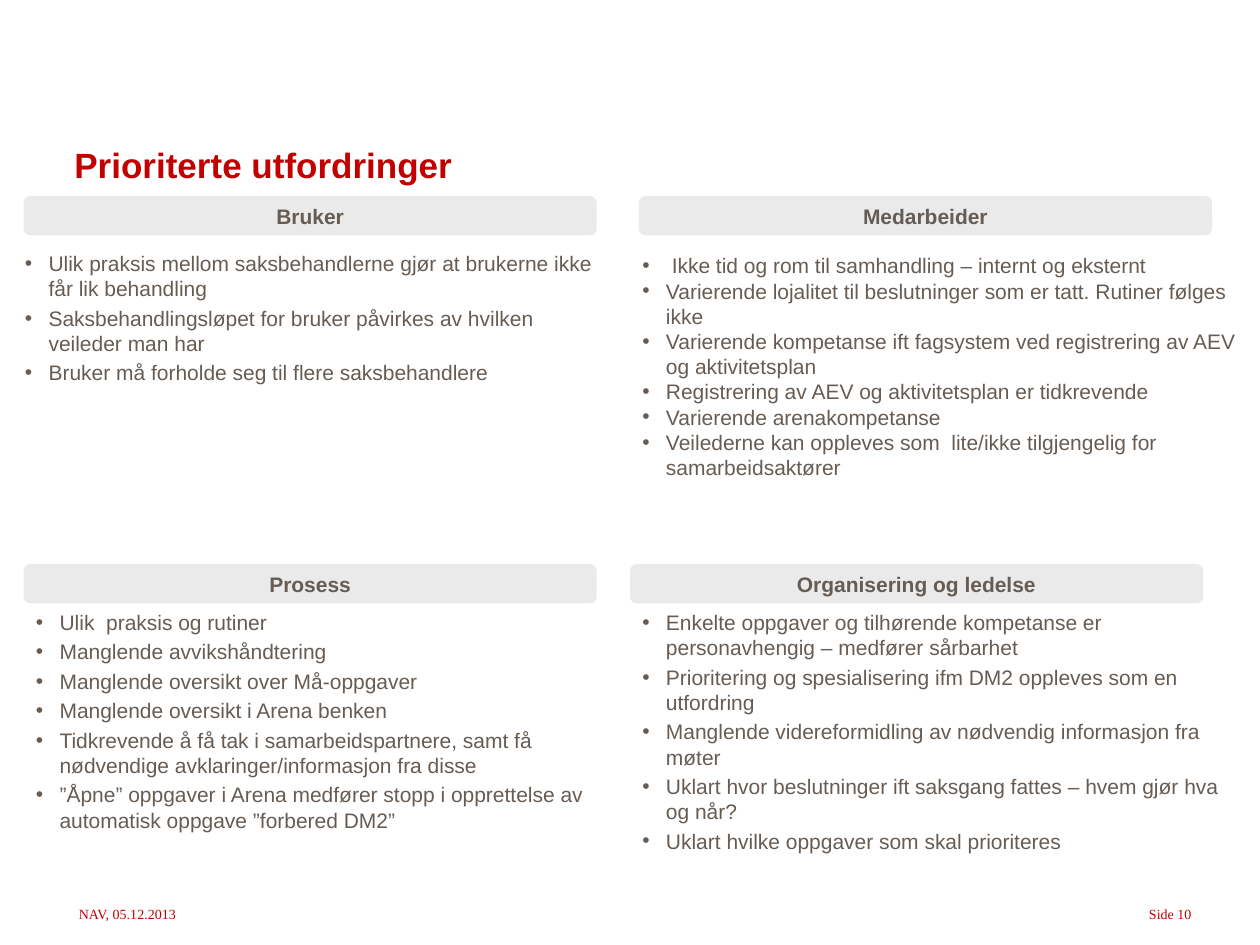
import pptx
import pptx.util
import pptx.dml.color
import pptx.enum.shapes
import pptx.enum.text
import lxml.etree

Pt = pptx.util.Pt
Kind = pptx.enum.shapes.MSO_SHAPE
Side = pptx.enum.text.PP_ALIGN
Hold = pptx.enum.text.MSO_ANCHOR
Fit = pptx.enum.text.MSO_AUTO_SIZE
RED, BROWN, GREY, WHITE = "C30000", "675C53", "EAEAEA", "FFFFFF"


def paint(part, shade):
    if hasattr(part, "solid"):
        part.solid()
        part.fore_color.rgb = pptx.dml.color.RGBColor.from_string(shade)
    else:
        part.color.rgb = pptx.dml.color.RGBColor.from_string(shade)


def write(shape, lines, look, shade, side=Side.LEFT, hold=Hold.TOP, wrap=True, dot=False, gap=0):
    frame = shape.text_frame
    frame.auto_size = Fit.NONE
    frame.word_wrap = wrap
    frame.vertical_anchor = hold
    for rank, line in enumerate(lines):
        para = frame.add_paragraph() if rank else frame.paragraphs[0]
        para.text = line
        para.alignment = side
        para.space_before = Pt(gap if rank else 0)
        if dot:
            props = para._p.get_or_add_pPr()
            props.set("marL", str(Pt(13.5)))
            props.set("indent", str(-Pt(13.5)))
            space = "{http://schemas.openxmlformats.org/drawingml/2006/main}"
            lxml.etree.SubElement(props, space + "buFont", typeface="Arial")
            lxml.etree.SubElement(props, space + "buChar", char="•")
        for name, value in look.items():
            setattr(para.font, name, value)
        paint(para.font, shade)


deck = pptx.Presentation()
deck.slide_width, deck.slide_height = Pt(720), Pt(540)
slide = deck.slides.add_slide(deck.slide_layouts[5])
shapes = slide.shapes

plain = {"name": "Arial", "size": Pt(12), "bold": False}
strong = {**plain, "bold": True}
large = {**strong, "size": Pt(20)}
small = {"name": "Times New Roman", "size": Pt(8)}

title = shapes.title
place = {"left": 35.3, "top": 20, "width": 571.7, "height": 89.3}
for name, value in place.items():
    setattr(title, name, Pt(value))
write(title, ["Prioriterte utfordringer"], large, RED, hold=Hold.BOTTOM)
title.text_frame.paragraphs[0].line_spacing = 0.8

feet = [
    ("NAV, 05.12.2013", 38, 72, Side.LEFT),
    ("Side 10", 648, 40, Side.RIGHT),
]
for text, left, width, side in feet:
    foot = shapes.add_textbox(Pt(left), Pt(514), Pt(width), Pt(16.5))
    write(foot, [text], small, RED, side, wrap=False)

themes = [
    ("Bruker", 13.5, 112, (7.2, 139.7, 340.6, 166.3), 2.4, None, [
        "Ulik praksis mellom saksbehandlerne gjør at brukerne ikke får lik behandling",
        "Saksbehandlingsløpet for bruker påvirkes av hvilken veileder man har",
        "Bruker må forholde seg til flere saksbehandlere",
    ]),
    ("Medarbeider", 365.1, 112, (360, 141, 360, 162.7), 0, None, [
        " Ikke tid og rom til samhandling – internt og eksternt",
        "Varierende lojalitet til beslutninger som er tatt. Rutiner følges ikke",
        "Varierende kompetanse ift fagsystem ved registrering av AEV og aktivitetsplan",
        "Registrering av AEV og aktivitetsplan er tidkrevende",
        "Varierende arenakompetanse",
        "Veilederne kan oppleves som  lite/ikke tilgjengelig for samarbeidsaktører",
    ]),
    ("Prosess", 13.5, 322.3, (13.5, 344.8, 336.2, 153.4), 2.4, WHITE, [
        "Ulik  praksis og rutiner",
        "Manglende avvikshåndtering",
        "Manglende oversikt over Må-oppgaver",
        "Manglende oversikt i Arena benken",
        "Tidkrevende å få tak i samarbeidspartnere, samt få nødvendige avklaringer/informasjon fra disse",
        "”Åpne” oppgaver i Arena medfører stopp i opprettelse av automatisk oppgave ”forbered DM2”",
    ]),
    ("Organisering og ledelse", 360, 322.3, (360, 344.8, 345.6, 159), 2.4, None, [
        "Enkelte oppgaver og tilhørende kompetanse er personavhengig – medfører sårbarhet",
        "Prioritering og spesialisering ifm DM2 oppleves som en utfordring",
        "Manglende videreformidling av nødvendig informasjon fra møter",
        "Uklart hvor beslutninger ift saksgang fattes – hvem gjør hva og når?",
        "Uklart hvilke oppgaver som skal prioriteres",
    ]),
]
for head, left, top, area, gap, back, points in themes:
    spot = [Pt(value) for value in area]
    if back:
        box = shapes.add_shape(Kind.RECTANGLE, *spot)
        box.shadow.inherit = False
        paint(box.fill, back)
        box.line.fill.background()
    else:
        box = shapes.add_textbox(*spot)
    write(box, points, plain, BROWN, dot=True, gap=gap)

    bar = shapes.add_shape(Kind.ROUNDED_RECTANGLE, Pt(left), Pt(top), Pt(327.5), Pt(22.5))
    bar.shadow.inherit = False
    paint(bar.fill, GREY)
    bar.line.fill.background()
    write(bar, [head], strong, BROWN, Side.CENTER, Hold.MIDDLE)

deck.save("out.pptx")
